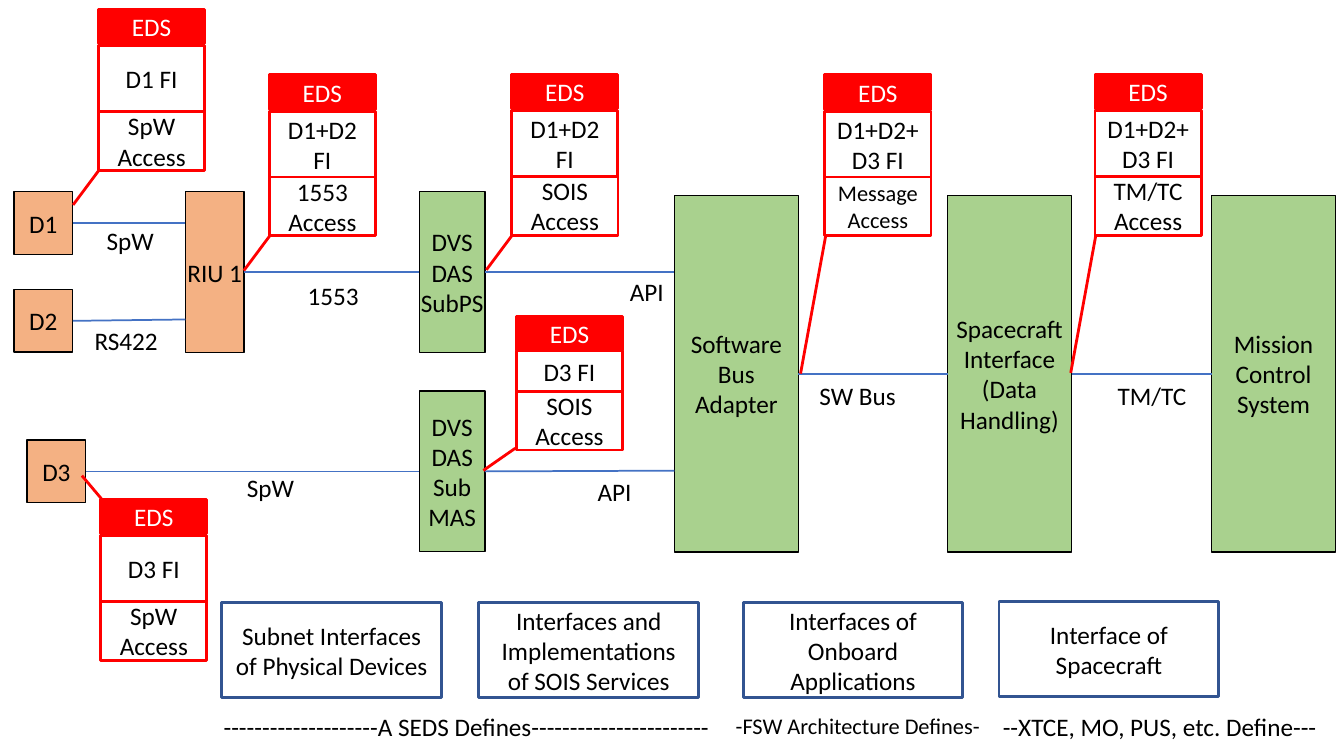
import dataclasses
import lxml.etree
import pptx
import pptx.dml.color
import pptx.enum.shapes
import pptx.enum.text
import pptx.oxml.ns
import pptx.util

Pt = pptx.util.Pt
Kind = pptx.enum.shapes.MSO_SHAPE
Align = pptx.enum.text.PP_ALIGN


@dataclasses.dataclass(frozen=True)
class Theme:
    font: str = "Calibri"
    size: int = 18
    small: int = 16
    ink: str = "000000"
    paper: str = "FFFFFF"
    device: str = "F4B183"
    system: str = "A9D18E"
    sheet: str = "FF0000"
    link: str = "4472C4"
    frame: str = "325491"


class Board:
    def __init__(self, slide, theme):
        self.slide = slide
        self.theme = theme

    def tint(self, value):
        return pptx.dml.color.RGBColor.from_string(value)

    def letter(self, frame, text, size, ink, align):
        frame.text = text
        line = frame.paragraphs[0]
        line.alignment = align
        font = line.runs[0].font
        font.name = self.theme.font
        font.size = Pt(size)
        font.color.rgb = self.tint(ink)

    def box(self, text, place, fill, edge, width, kind=Kind.RECTANGLE,
            size=None, ink=None, tight=False):
        shape = self.slide.shapes.add_shape(kind, *map(Pt, place))
        shape.shadow.inherit = False
        shape.fill.solid()
        shape.fill.fore_color.rgb = self.tint(fill)
        shape.line.color.rgb = self.tint(edge)
        shape.line.width = Pt(width)
        frame = shape.text_frame
        frame.word_wrap = True
        frame.vertical_anchor = pptx.enum.text.MSO_ANCHOR.MIDDLE
        if tight:
            frame.margin_left = frame.margin_right = 0
            frame.margin_top = frame.margin_bottom = 0
        self.letter(frame, text, size or self.theme.size,
                    ink or self.theme.ink, Align.CENTER)
        return shape

    def node(self, text, place, fill):
        return self.box(text, place, fill, self.theme.ink, 1, tight=True)

    def card(self, left, top, body, access, tail, size=None, gap=1.5, depth=47):
        red, white = self.theme.sheet, self.theme.paper
        wide, head = 75.8, 24.5
        mid = top + head + gap
        note = self.box(access, (left, mid + depth, wide, 42), white, red, 2,
                        kind=Kind.LINE_CALLOUT_1, size=size)
        for i, value in enumerate(tail):
            note.adjustments[i] = value
        self.box(body, (left, mid, wide, depth), white, red, 2)
        self.box("EDS", (left, top, wide, head), red, red, 2, ink=white)

    def link(self, start, end, height=None):
        line = self.slide.shapes.add_connector(
            pptx.enum.shapes.MSO_CONNECTOR.STRAIGHT, 0, 0, 0, 0)
        line.begin_connect(start, 3)
        if height is None:
            line.end_connect(end, 1)
        else:
            line.end_x, line.end_y = end.left, Pt(height)
        line.line.color.rgb = self.tint(self.theme.link)
        line.line.width = Pt(1.25)
        props = line._element.spPr
        lxml.etree.SubElement(props, pptx.oxml.ns.qn("a:effectLst"))

    def label(self, text, place, wrap=False, size=None):
        frame = self.slide.shapes.add_textbox(*map(Pt, place)).text_frame
        frame.word_wrap = wrap
        frame.auto_size = pptx.enum.text.MSO_AUTO_SIZE.SHAPE_TO_FIT_TEXT
        self.letter(frame, text, size or self.theme.size, self.theme.ink, Align.LEFT)


def main():
    deck = pptx.Presentation()
    deck.slide_width, deck.slide_height = Pt(960), Pt(540)
    theme = Theme()
    board = Board(deck.slides.add_slide(deck.slide_layouts[6]), theme)

    d1, d2, d3 = (
        board.node(name, (left, top, 42, 44.8), theme.device)
        for name, left, top in (("D1", 10, 137), ("D2", 10, 206.8), ("D3", 19.3, 314.3)))
    riu = board.node("RIU 1", (132.4, 137, 42, 114.8), theme.device)
    subps, submas = (
        board.node(name, (299.6, top, 46.8, 114.8), theme.system)
        for name, top in (("DVS DAS SubPS", 137), ("DVS DAS Sub MAS", 279.3)))
    bus, craft, control = (
        board.node(name, (left, 139.6, 88.6, 254.6), theme.system)
        for name, left in (("Software Bus Adapter", 481.7),
                           ("Spacecraft Interface (Data Handling)", 676.8),
                           ("Mission Control System", 865.4)))

    for start, end, height in (
            (d1, riu, 159.4), (d2, riu, 228.2), (riu, subps, None),
            (d3, submas, None), (subps, bus, 194.4), (submas, bus, 336.2),
            (bus, craft, None), (craft, control, None)):
        board.link(start, end, height)

    for text, left, top, width in (
            ("SpW", 69.1, 157.3, 49), ("RS422", 60.5, 228.6, 60.5),
            ("SpW", 169.2, 333.6, 49), ("1553", 212.6, 196.8, 51),
            ("API", 442.8, 193.9, 39), ("API", 419.8, 336.5, 39),
            ("SW Bus", 578.2, 268.2, 70), ("TM/TC", 791.3, 268.2, 64)):
        board.label(text, (left, top, width, 29))

    near = (0.988, 0.009, 1.59, -0.24)
    far = (0.988, 0.009, 3.342, -0.229)
    board.card(70.4, 6.6, "D1 FI", "SpW Access", near)
    board.card(72, 356.6, "D3 FI", "SpW Access", (-1.716, 0.02, -2.139, -0.178))
    board.card(192.4, 53.5, "D1+D2 FI", "1553 Access", near)
    board.card(365.6, 53, "D1+D2 FI", "SOIS Access", near)
    board.card(589.2, 53.5, "D1+D2+D3 FI", "Message Access", far, size=theme.small)
    board.card(782.2, 53, "D1+D2+D3 FI", "TM/TC Access", far)
    board.card(368.9, 226.2, "D3 FI", "SOIS Access", (0.969, -0.011, 1.347, -0.312),
               gap=0, depth=28.8)

    for text, left, top in (
            ("Subnet Interfaces of Physical Devices", 158.4, 430.6),
            ("Interfaces and Implementations of SOIS Services", 342, 430.6),
            ("Interfaces of Onboard Applications", 530.8, 430.6),
            ("Interface of Spacecraft", 713.6, 429.8)):
        board.box(text, (left, top, 157, 67.7), theme.paper, theme.frame, 2)

    for text, left, top, width, size in (
            ("--------------------A SEDS Defines-----------------------",
             152.6, 504.7, 361.4, theme.size),
            ("-FSW Architecture Defines-", 518.4, 505.4, 190.8, theme.small),
            ("--XTCE, MO, PUS, etc. Define---", 709.2, 504.7, 244.8, theme.size)):
        board.label(text, (left, top, width, 29), wrap=True, size=size)

    deck.save("out.pptx")


if __name__ == "__main__":
    main()
